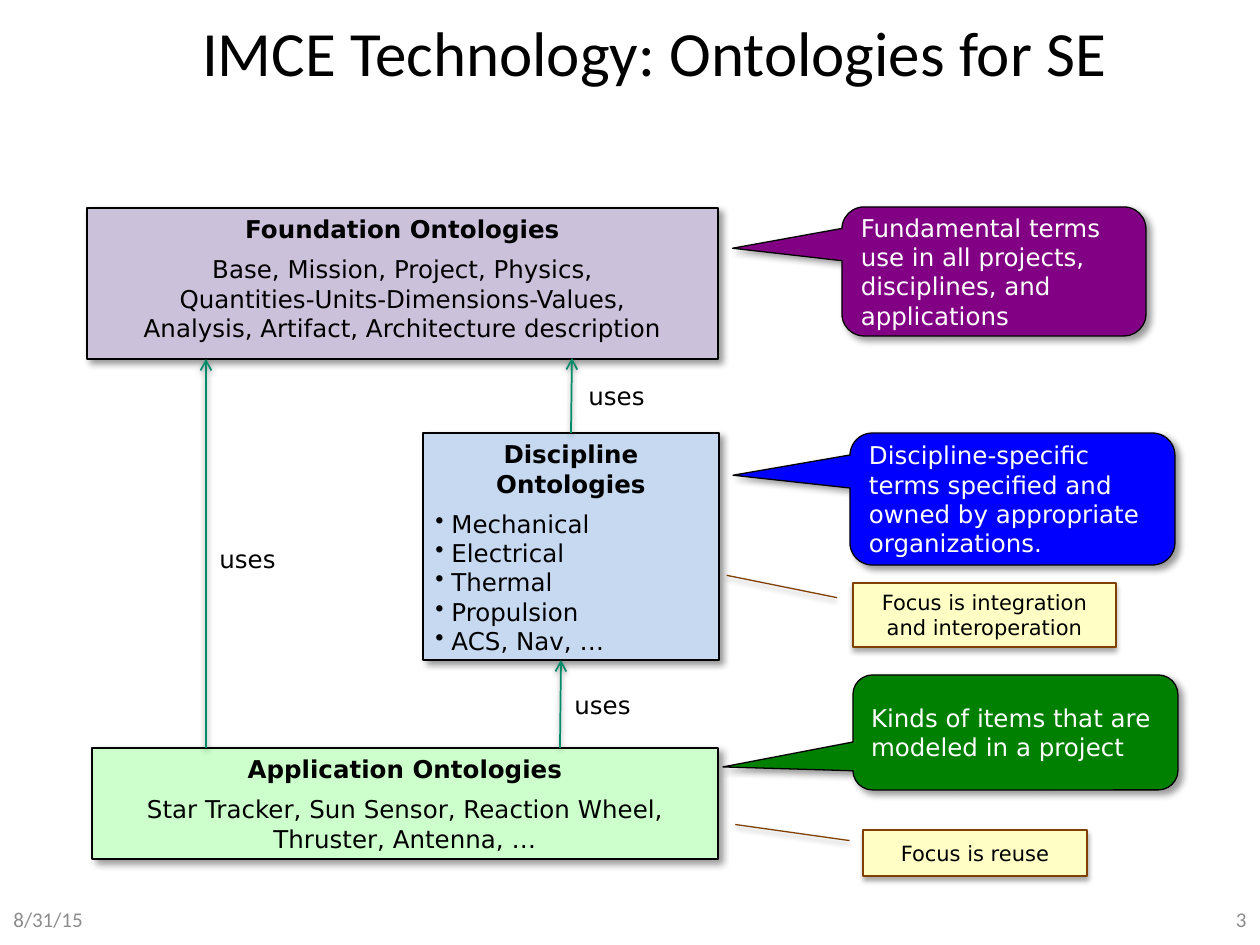
import pptx
import pptx.util
import pptx.dml.color
import pptx.enum.shapes
import pptx.enum.text
import pptx.oxml.ns
import lxml.etree

RGB = pptx.dml.color.RGBColor
KIND = pptx.enum.shapes.MSO_SHAPE
ALIGN = pptx.enum.text.PP_ALIGN
ANCHOR = pptx.enum.text.MSO_ANCHOR
qn = pptx.oxml.ns.qn

BLACK = RGB(0x00, 0x00, 0x00)
WHITE = RGB(0xFF, 0xFF, 0xFF)
GREY = RGB(0x8C, 0x8C, 0x8C)
LILAC = RGB(0xCC, 0xC1, 0xDA)
SKY = RGB(0xC6, 0xD9, 0xF1)
MINT = RGB(0xCC, 0xFF, 0xCC)
TEAL = RGB(0x00, 0x8B, 0x69)
PURPLE = RGB(0x82, 0x00, 0x84)
BLUE = RGB(0x00, 0x00, 0xFF)
GREEN = RGB(0x00, 0x80, 0x00)
CREAM = RGB(0xFE, 0xFE, 0xC5)
BROWN = RGB(0x80, 0x40, 0x00)

SANS = "DejaVu Sans"
PLAIN = "Calibri"
BOX_SHADE = (40, 4, 3, 45)
NOTE_SHADE = (35, 3.1, 1.8, 90)
LINE_SHADE = (38, 3.1, 1.6, 90)


def px(num):
    return round(num * 914400 / 126)


def shade(item, alpha, blur, dist, angle):
    props = item._element.spPr
    effect = props.find(qn("a:effectLst"))
    if effect is None:
        effect = lxml.etree.SubElement(props, qn("a:effectLst"))
    outer = lxml.etree.SubElement(
        effect, qn("a:outerShdw"), blurRad=str(round(blur * 12700)),
        dist=str(round(dist * 12700)), dir=str(angle * 60000),
        algn="tl", rotWithShape="0")
    color = lxml.etree.SubElement(outer, qn("a:srgbClr"), val="000000")
    lxml.etree.SubElement(color, qn("a:alpha"), val=str(alpha * 1000))


def add_run(para, text, size, color=BLACK, bold=False, face=SANS):
    run = para.add_run()
    run.text = text
    run.font.name = face
    run.font.size = pptx.util.Pt(size)
    run.font.bold = bold
    run.font.color.rgb = color


def add_dot(para):
    props = para._p.get_or_add_pPr()
    props.set("marL", str(px(16)))
    props.set("indent", str(-px(16)))
    lxml.etree.SubElement(props, qn("a:buChar"), char="•")


def add_text(slide, place, text, size, color=BLACK, face=SANS,
             align=ALIGN.LEFT, anchor=ANCHOR.TOP):
    frame = slide.shapes.add_textbox(*map(px, place)).text_frame
    frame.word_wrap = True
    frame.vertical_anchor = anchor
    para = frame.paragraphs[0]
    para.alignment = align
    add_run(para, text, size, color, face=face)


def add_shape(slide, kind, place, fill, edge, glow, anchor):
    shape = slide.shapes.add_shape(kind, *map(px, place))
    shape.fill.solid()
    shape.fill.fore_color.rgb = fill
    shape.line.color.rgb = edge
    shape.line.width = pptx.util.Pt(0.75)
    shape.shadow.inherit = False
    shade(shape, *glow)
    shape.text_frame.word_wrap = True
    shape.text_frame.vertical_anchor = anchor
    return shape


def add_box(slide, place, fill, head, body, dots=False):
    box = add_shape(slide, KIND.RECTANGLE, place, fill, BLACK, BOX_SHADE,
                    ANCHOR.TOP)
    frame = box.text_frame
    para = frame.paragraphs[0]
    para.alignment = ALIGN.CENTER
    add_run(para, head, 14, bold=True)
    for index, lines in enumerate(body):
        para = frame.add_paragraph()
        if dots:
            add_dot(para)
        para.alignment = ALIGN.LEFT if dots else ALIGN.CENTER
        if index == 0:
            para.space_before = pptx.util.Pt(6)
        for order, line in enumerate(lines.split("\n")):
            if order:
                para.add_line_break()
            add_run(para, line, 14)
    return box


def add_call(slide, kind, place, points, fill, edge, glow, text, size, color,
             align):
    shape = add_shape(slide, kind, place, fill, edge, glow, ANCHOR.MIDDLE)
    for index, point in enumerate(points):
        shape.adjustments[index] = point
    para = shape.text_frame.paragraphs[0]
    para.alignment = align
    add_run(para, text, size, color)


def add_cloud(slide, place, tip, fill, text):
    add_call(slide, KIND.ROUNDED_RECTANGULAR_CALLOUT, place, (*tip, 0.17),
             fill, BLACK, BOX_SHADE, text, 14, WHITE, ALIGN.LEFT)


def add_note(slide, place, reach, text):
    add_call(slide, KIND.LINE_CALLOUT_1, place, (0.23, -0.06, -0.12, reach),
             CREAM, BROWN, NOTE_SHADE, text, 12, BLACK, ALIGN.CENTER)


def add_arrow(slide, start, end, source=None):
    line = slide.shapes.add_connector(
        pptx.enum.shapes.MSO_CONNECTOR.STRAIGHT, *map(px, start + end))
    if source is not None:
        line.begin_connect(source, 0)
    line.line.color.rgb = TEAL
    line.line.width = pptx.util.Pt(1)
    lxml.etree.SubElement(line.line._get_or_add_ln(), qn("a:tailEnd"),
                          type="arrow")
    shade(line, *LINE_SHADE)


def main():
    deck = pptx.Presentation()
    deck.slide_width = px(1260)
    deck.slide_height = px(945)
    slide = deck.slides.add_slide(deck.slide_layouts[6])

    add_text(slide, (94, 4, 1121, 94), "IMCE Technology: Ontologies for SE",
             36, face=PLAIN, align=ALIGN.CENTER, anchor=ANCHOR.MIDDLE)

    add_box(slide, (87, 208, 631, 151), LILAC, "Foundation Ontologies",
            ["Base, Mission, Project, Physics,",
             "Quantities-Units-Dimensions-Values,\n"
             "Analysis, Artifact, Architecture description"])
    field = add_box(slide, (423, 433, 296, 227), SKY, "Discipline Ontologies",
                    ["Mechanical", "Electrical", "Thermal", "Propulsion",
                     "ACS, Nav, …"], dots=True)
    add_box(slide, (92, 748, 626, 111), MINT, "Application Ontologies",
            ["Star Tracker, Sun Sensor, Reaction Wheel, "
             "Thruster, Antenna, …"])

    add_arrow(slide, (571, 433), (572, 358), field)
    add_arrow(slide, (206, 748), (206, 359))
    add_arrow(slide, (560, 748), (561, 660))
    for place in ((576, 375, 96, 43), (562, 684, 110, 43),
                  (207, 538, 98, 43)):
        add_text(slide, place, "uses", 14)

    add_cloud(slide, (842, 207, 304, 129), (-0.86, -0.18), PURPLE,
              "Fundamental terms use in all projects, disciplines, and "
              "applications")
    add_cloud(slide, (850, 433, 325, 132), (-0.86, -0.18), BLUE,
              "Discipline-specific terms specified and owned by appropriate "
              "organizations.")
    add_cloud(slide, (853, 675, 325, 115), (-0.9, 0.3), GREEN,
              "Kinds of items that are modeled in a project")

    add_note(slide, (853, 583, 263, 64), -0.48,
             "Focus is integration and interoperation")
    add_note(slide, (863, 830, 224, 46), -0.57, "Focus is reuse")

    for left, text, align in ((1, "8/31/15", ALIGN.LEFT),
                              (965, "3", ALIGN.RIGHT)):
        add_text(slide, (left, 894, 294, 50), text, 12, GREY, PLAIN, align,
                 ANCHOR.MIDDLE)

    deck.save("out.pptx")


if __name__ == "__main__":
    main()
